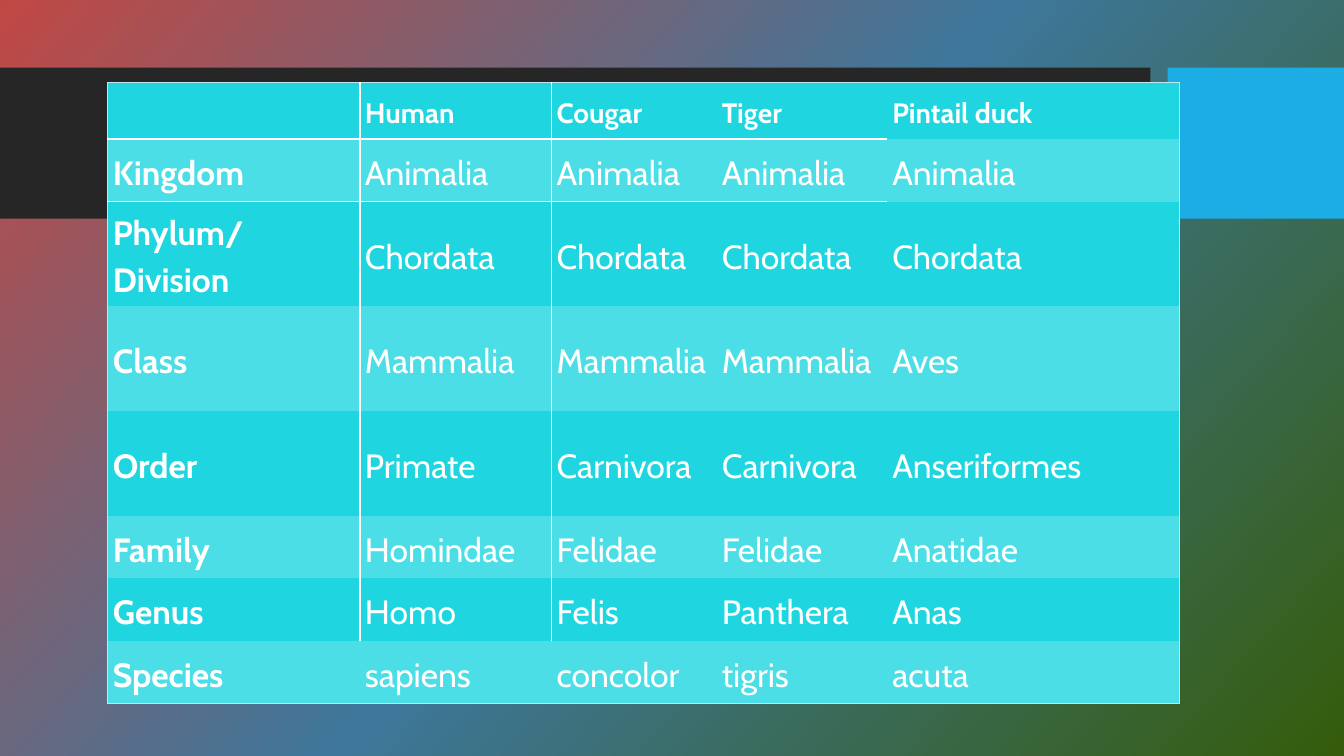
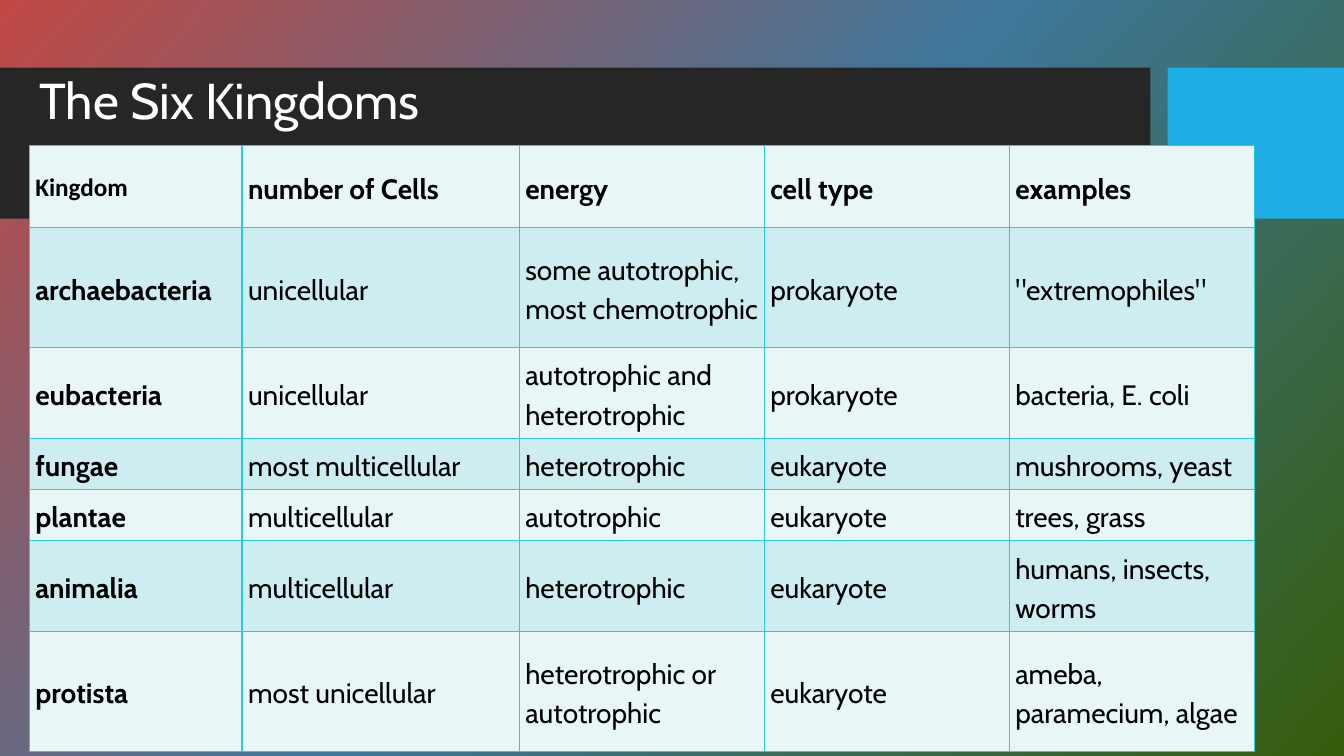
"""Build two biology classification slides that share one dark banded style."""
from copy import deepcopy
from dataclasses import dataclass

from lxml.etree import SubElement
from pptx import Presentation
from pptx.dml.color import RGBColor as Rgb
from pptx.enum.shapes import MSO_SHAPE as Preset
from pptx.enum.text import MSO_ANCHOR as Anchor, MSO_AUTO_SIZE as AutoSize, PP_ALIGN as Align
from pptx.oxml.ns import qn
from pptx.util import Inches, Pt

TITLE_ONLY, BLANK = 5, 6
NO_STYLE = "{2D5ABB26-0587-4C30-8999-92F81FD0307C}"


@dataclass(frozen=True)
class TypeStyle:
    size: int
    font: str = "Cabin"
    spacing: float = 1.15


@dataclass(frozen=True)
class Theme:
    backdrop: tuple = ("C04844", "3E779B", "355C0B")
    backdrop_angle: int = 42
    band: str = "262626"
    accent: str = "1CADE4"
    white: str = "FFFFFF"
    black: str = "000000"
    aqua: str = "1FD6E0"
    aqua_light: str = "4CDEE6"
    frame: str = "BEE8EC"
    grid: str = "27CED7"
    mist: str = "E8F6F8"
    mist_dark: str = "CDEDF0"
    title: TypeStyle = TypeStyle(36, spacing=0.9)
    large: TypeStyle = TypeStyle(24)
    medium: TypeStyle = TypeStyle(20)
    small: TypeStyle = TypeStyle(18, "Calibri", 1.07)


@dataclass(frozen=True)
class TableLook:
    fills: tuple
    ink: str
    margin: float
    body: TypeStyle
    header: TypeStyle
    corner: TypeStyle


class Lesson:
    def __init__(self, theme):
        self.theme = theme
        self.deck = Presentation()
        self.deck.slide_width, self.deck.slide_height = Inches(13.33), Inches(7.5)
        self.page = None
        self.paint_backdrop()

    def paint_backdrop(self):
        master = self.deck.slide_master
        fill = master.background.fill
        fill.gradient()
        fill.gradient_angle = 360 - self.theme.backdrop_angle
        stops = master.element.xpath(".//p:bg//a:gsLst")[0]
        stops.insert(1, deepcopy(stops[0]))
        for index, (stop, color) in enumerate(zip(fill.gradient_stops, self.theme.backdrop)):
            stop.position = index / 2
            stop.color.rgb = Rgb.from_string(color)

    def add_page(self, layout):
        first = self.page is None
        self.page = self.deck.slides.add_slide(self.deck.slide_layouts[layout])
        if first:
            self.share_band(0, 11.41, self.theme.band, 2)
            self.share_band(11.58, 1.75, self.theme.accent, 3)

    def share_band(self, left, width, color, position):
        band = self.page.shapes.add_shape(
            Preset.RECTANGLE, Inches(left), Inches(0.67), Inches(width), Inches(1.5))
        band.shadow.inherit = False
        band.fill.solid()
        band.fill.fore_color.rgb = Rgb.from_string(color)
        band.line.fill.background()
        self.deck.slide_master.element.cSld.spTree.insert(position, band.element)

    def add_text(self, frame, text, style, color, bold=False):
        para = frame.paragraphs[0]
        para.alignment = Align.LEFT
        para.line_spacing = style.spacing
        span = para.add_run()
        span.text = text
        span.font.name = style.font
        span.font.size = Pt(style.size)
        span.font.bold = bold
        span.font.color.rgb = Rgb.from_string(color)

    def add_title(self, text):
        box = self.page.shapes.title
        box.left, box.top = Inches(0.29), Inches(0.43)
        box.width, box.height = Inches(10.51), Inches(1.18)
        frame = box.text_frame
        frame.auto_size = AutoSize.NONE
        frame.vertical_anchor = Anchor.MIDDLE
        self.add_text(frame, text, self.theme.title, self.theme.white)

    def add_table(self, left, top, widths, heights, rows, look, borders):
        table = self.page.shapes.add_table(
            len(heights), len(widths), Inches(left), Inches(top),
            Inches(sum(widths)), Inches(sum(heights))).table
        table.first_row = table.horz_banding = False
        table._tbl.tblPr.find(qn("a:tableStyleId")).text = NO_STYLE
        for column, width in zip(table.columns, widths):
            column.width = Inches(width)
        for row, height in zip(table.rows, heights):
            row.height = Inches(height)
        for r, texts in enumerate(rows):
            for c, text in enumerate(texts):
                self.fill_cell(table.cell(r, c), r, c, text, look, borders(r, c))

    def fill_cell(self, cell, r, c, text, look, edges):
        cell.margin_left = cell.margin_right = Inches(look.margin)
        cell.margin_top = cell.margin_bottom = Inches(look.margin)
        cell.vertical_anchor = Anchor.MIDDLE
        for side in "LRTB":
            self.draw_edge(cell, side, edges.get(side))
        cell.fill.solid()
        cell.fill.fore_color.rgb = Rgb.from_string(look.fills[r % 2])
        if text:
            style = look.body if r else look.header if c else look.corner
            self.add_text(cell.text_frame, text, style, look.ink, bold=r == 0 or c == 0)

    def draw_edge(self, cell, side, edge):
        if edge is None:
            return
        color, width = edge
        line = SubElement(cell._tc.get_or_add_tcPr(), qn(f"a:ln{side}"), w=str(Pt(width)))
        solid = SubElement(line, qn("a:solidFill"))
        SubElement(solid, qn("a:srgbClr"), val=color)


def taxonomy_borders(theme, last_row, last_col):
    frame, divider, rule = (theme.frame, 0.75), (theme.white, 1), (theme.white, 1.5)

    def edges(r, c):
        found = {}
        if r < last_row and c < 2:
            found["LR"[c == 0]] = divider
        if r < 2 and c < last_col:
            found["TB"[r == 0]] = rule
        outer = {"L": c == 0, "R": c == last_col, "T": r == 0, "B": r == last_row}
        found.update({side: frame for side, on in outer.items() if on})
        return found

    return edges


TAXONOMY = [
    ("", "Human", "Cougar", "Tiger", "Pintail duck"),
    ("Kingdom", "Animalia", "Animalia", "Animalia", "Animalia"),
    ("Phylum/Division", "Chordata", "Chordata", "Chordata", "Chordata"),
    ("Class", "Mammalia", "Mammalia", "Mammalia", "Aves"),
    ("Order", "Primate", "Carnivora", "Carnivora", "Anseriformes"),
    ("Family", "Homindae", "Felidae", "Felidae", "Anatidae"),
    ("Genus", "Homo", "Felis", "Panthera", "Anas"),
    ("Species", "sapiens", "concolor", "tigris", "acuta"),
]

KINGDOMS = [
    ("Kingdom", "number of Cells", "energy", "cell type", "examples"),
    ("archaebacteria", "unicellular", "some autotrophic, most chemotrophic", "prokaryote",
     '"extremophiles"'),
    ("eubacteria", "unicellular", "autotrophic and heterotrophic", "prokaryote",
     "bacteria, E. coli"),
    ("fungae", "most multicellular", "heterotrophic", "eukaryote", "mushrooms, yeast"),
    ("plantae", "multicellular", "autotrophic", "eukaryote", "trees, grass"),
    ("animalia", "multicellular", "heterotrophic", "eukaryote", "humans, insects, worms"),
    ("protista", "most unicellular", "heterotrophic or autotrophic", "eukaryote",
     "ameba, paramecium, algae"),
]


def main():
    theme = Theme()
    lesson = Lesson(theme)

    lesson.add_page(BLANK)
    look = TableLook((theme.aqua, theme.aqua_light), theme.white, 0.05,
                     theme.large, theme.medium, theme.medium)
    lesson.add_table(1.07, 0.82, [2.5, 1.9, 1.64, 1.69, 2.9],
                     [0.56, 0.62] + [1.04] * 3 + [0.62] * 3, TAXONOMY, look,
                     taxonomy_borders(theme, len(TAXONOMY) - 1, len(TAXONOMY[0]) - 1))

    lesson.add_page(TITLE_ONLY)
    lesson.add_title("The Six Kingdoms")
    look = TableLook((theme.mist, theme.mist_dark), theme.black, 0.06,
                     theme.medium, theme.medium, theme.small)
    lesson.add_table(0.29, 1.44, [2.11, 2.75] + [2.43] * 3,
                     [0.82, 1.19, 0.83, 0.46, 0.46, 0.83, 1.19], KINGDOMS, look,
                     lambda r, c: dict.fromkeys("LRTB", (theme.grid, 1)))

    lesson.deck.save("out.pptx")


if __name__ == "__main__":
    main()
